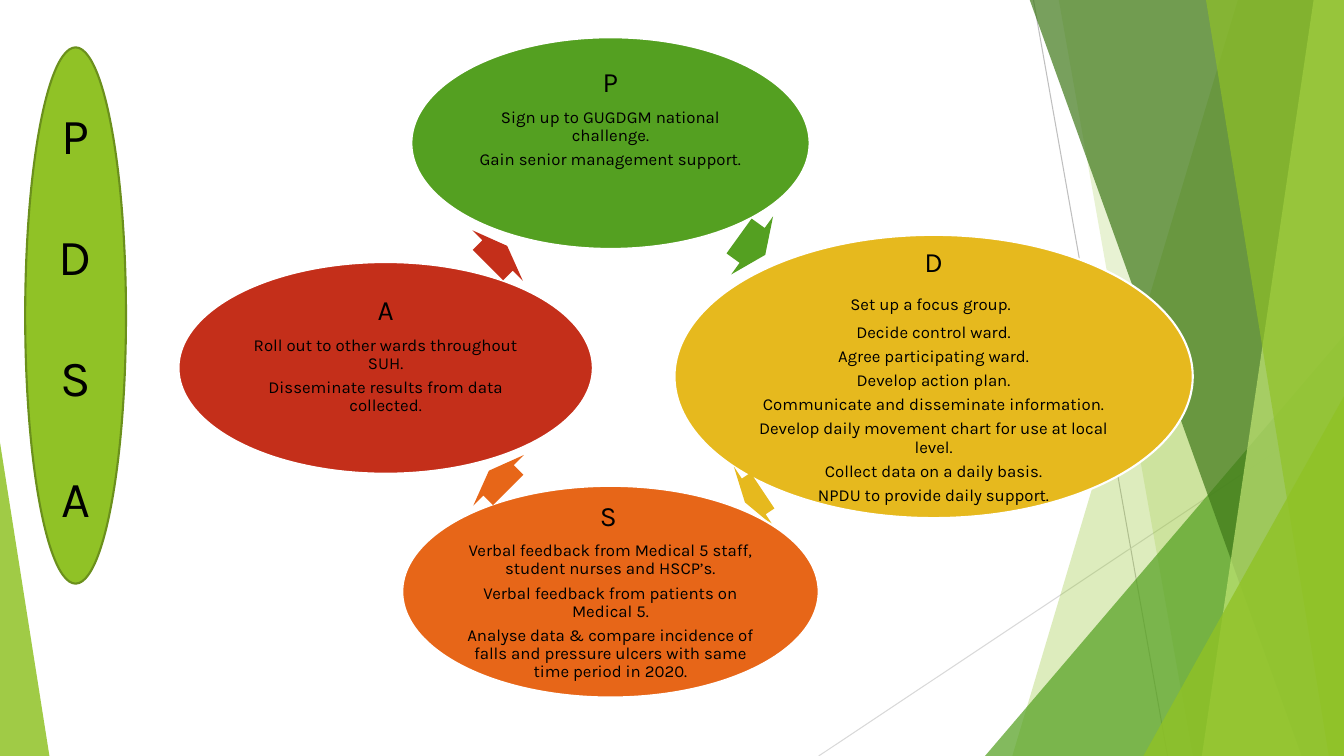
from dataclasses import dataclass

from lxml.etree import SubElement
from pptx import Presentation
from pptx.dml.color import RGBColor
from pptx.enum.shapes import MSO_CONNECTOR, MSO_SHAPE
from pptx.enum.text import MSO_ANCHOR, PP_ALIGN
from pptx.oxml.ns import qn
from pptx.shapes.autoshape import Shape
from pptx.slide import Slide
from pptx.util import Inches, Pt

FONT = "Karla"
BLACK = RGBColor(0x00, 0x00, 0x00)
WHITE = RGBColor(0xFF, 0xFF, 0xFF)
GREY = RGBColor(0xBF, 0xBF, 0xBF)
LIGHT_GREY = RGBColor(0xD9, 0xD9, 0xD9)
LIME = RGBColor(0x90, 0xC2, 0x26)
PALE_LIME = RGBColor(0xC0, 0xE4, 0x74)
OLIVE = RGBColor(0x6B, 0x90, 0x1C)
GREEN = RGBColor(0x54, 0xA0, 0x21)
DARK_GREEN = RGBColor(0x3F, 0x78, 0x19)
YELLOW = RGBColor(0xE6, 0xB9, 0x1E)
ORANGE = RGBColor(0xE7, 0x66, 0x18)
RED = RGBColor(0xC4, 0x2F, 0x1A)

WIDTH, HEIGHT = 13.33, 7.5
FACET_TOP = -0.01
HEADING_SIZE, BODY_SIZE = 20, 12
GAP_RATIO = 0.35
BLANK_LINE = 0.24

Box = tuple[float, float, float, float]


@dataclass(frozen=True)
class Ray:
    start: tuple[float, float]
    end: tuple[float, float]
    color: RGBColor


@dataclass(frozen=True)
class Facet:
    top_left: float
    bottom_left: float
    color: RGBColor
    opacity: int


@dataclass(frozen=True)
class Wedge:
    box: Box
    apex: float
    color: RGBColor
    opacity: int


@dataclass(frozen=True)
class Line:
    text: str
    size: float = BODY_SIZE
    space_size: float = 0


@dataclass(frozen=True)
class Stage:
    box: Box
    color: RGBColor
    lines: list[Line]
    arrow_box: Box
    arrow_angle: float
    blank_lines: int = 0


RAYS = [
    Ray((10.25, 0), (11.58, HEIGHT), GREY),
    Ray((WIDTH, 4.03), (8.12, HEIGHT), LIGHT_GREY),
]
BACKDROP = [
    Facet(12.28, 10.04, LIME, 30),
    Facet(10.5, 11.83, LIME, 20),
    Wedge((9.77, 3.33, 3.56, 4.17), 1, GREEN, 72),
    Facet(10.21, 12.91, DARK_GREEN, 70),
    Facet(13.03, 11.92, PALE_LIME, 70),
    Facet(11.96, 13.18, LIME, 65),
    Wedge((11.34, 3.93, 1.99, 3.57), 1, LIME, 80),
    Wedge((0, 4.39, 0.49, 3.11), 0, LIME, 85),
]
STAGES = [
    Stage((4.08, 0.37, 3.95, 2.1), GREEN, [
        Line("P", HEADING_SIZE),
        Line("Sign up to GUGDGM national challenge."),
        Line("Gain senior management support."),
    ], (7.3, 2.08, 0.32, 0.71), 35.8, blank_lines=2),
    Stage((6.69, 2.33, 5.14, 2.81), YELLOW, [
        Line("D", HEADING_SIZE),
        Line("Set up a focus group.", space_size=18),
        Line("Decide control ward."),
        Line("Agree participating ward."),
        Line("Develop action plan."),
        Line("Communicate and disseminate information."),
        Line("Develop daily movement chart for use at local level."),
        Line("Collect data on a daily basis."),
        Line("NPDU to provide daily support."),
    ], (7.37, 4.57, 0.21, 0.71), 146.3),
    Stage((3.99, 4.82, 4.13, 2.1), ORANGE, [
        Line("S", HEADING_SIZE, space_size=BODY_SIZE),
        Line("Verbal feedback from Medical 5 staff, student nurses and HSCP’s."),
        Line("Verbal feedback from patients on Medical 5."),
        Line("Analyse data & compare incidence of falls and pressure ulcers "
             "with same time period in 2020."),
    ], (4.81, 4.41, 0.27, 0.71), 225),
    Stage((1.77, 2.6, 4.11, 2.1), RED, [
        Line("A", HEADING_SIZE),
        Line("Roll out to other wards throughout SUH."),
        Line("Disseminate results from data collected."),
    ], (4.8, 2.18, 0.27, 0.71), 315, blank_lines=1),
]


def paint(shape: Shape, color: RGBColor, opacity: int = 100,
          outline: RGBColor | None = None) -> None:
    shape.shadow.inherit = False
    shape.fill.solid()
    shape.fill.fore_color.rgb = color
    if opacity < 100:
        color_element = shape._element.spPr.find(qn("a:solidFill"))[0]
        SubElement(color_element, qn("a:alpha"), val=str(opacity * 1000))
    if outline is None:
        shape.line.fill.background()
    else:
        shape.line.color.rgb = outline
        shape.line.width = Pt(1.5)


def add_preset(slide: Slide, kind: MSO_SHAPE, box: Box) -> Shape:
    return slide.shapes.add_shape(kind, *map(Inches, box))


def add_ray(slide: Slide, ray: Ray) -> None:
    connector = slide.shapes.add_connector(
        MSO_CONNECTOR.STRAIGHT, *map(Inches, ray.start + ray.end))
    connector.line.color.rgb = ray.color
    connector.line.width = Pt(0.75)
    SubElement(connector._element.spPr, qn("a:effectLst"))


def add_facet(slide: Slide, facet: Facet) -> None:
    builder = slide.shapes.build_freeform(Inches(facet.top_left), Inches(FACET_TOP))
    corners = [(WIDTH, FACET_TOP), (WIDTH, HEIGHT), (facet.bottom_left, HEIGHT)]
    builder.add_line_segments([(Inches(x), Inches(y)) for x, y in corners], close=True)
    paint(builder.convert_to_shape(), facet.color, facet.opacity)


def add_wedge(slide: Slide, wedge: Wedge) -> None:
    shape = add_preset(slide, MSO_SHAPE.ISOSCELES_TRIANGLE, wedge.box)
    shape.adjustments[0] = wedge.apex
    paint(shape, wedge.color, wedge.opacity)


def write_text(shape: Shape, lines: list[Line], *, line_spacing: float = 1,
               gap_ratio: float = 0, inset: float = 0.1, extra_bottom: float = 0) -> None:
    frame = shape.text_frame
    frame.word_wrap = True
    frame.vertical_anchor = MSO_ANCHOR.MIDDLE
    frame.margin_left = frame.margin_right = frame.margin_top = Inches(inset)
    frame.margin_bottom = Inches(inset + extra_bottom)
    for index, line in enumerate(lines):
        paragraph = frame.add_paragraph() if index else frame.paragraphs[0]
        paragraph.alignment = PP_ALIGN.CENTER
        paragraph.line_spacing = line_spacing
        if index < len(lines) - 1:
            paragraph.space_after = Pt(gap_ratio * max(line.size, line.space_size))
        pieces = [(line.text, line.size)]
        if line.space_size:
            pieces.append((" ", line.space_size))
        for text, size in pieces:
            run = paragraph.add_run()
            run.text = text
            run.font.name = FONT
            run.font.size = Pt(size)
            run.font.color.rgb = BLACK


def add_stage(slide: Slide, stage: Stage) -> None:
    ellipse = add_preset(slide, MSO_SHAPE.OVAL, stage.box)
    paint(ellipse, stage.color, outline=WHITE)
    write_text(ellipse, stage.lines, line_spacing=0.9, gap_ratio=GAP_RATIO,
               inset=0.03, extra_bottom=stage.blank_lines * BLANK_LINE)
    arrow = add_preset(slide, MSO_SHAPE.RIGHT_ARROW, stage.arrow_box)
    arrow.adjustments[0] = 0.6
    arrow.adjustments[1] = 0.5
    arrow.rotation = stage.arrow_angle
    paint(arrow, stage.color)


def main() -> None:
    presentation = Presentation()
    presentation.slide_width = Inches(WIDTH)
    presentation.slide_height = Inches(HEIGHT)
    slide = presentation.slides.add_slide(presentation.slide_layouts[6])
    for ray in RAYS:
        add_ray(slide, ray)
    for part in BACKDROP:
        if isinstance(part, Facet):
            add_facet(slide, part)
        else:
            add_wedge(slide, part)
    for stage in STAGES:
        add_stage(slide, stage)
    banner = add_preset(slide, MSO_SHAPE.OVAL, (0.25, 0.47, 1, 5.32))
    paint(banner, LIME, outline=OLIVE)
    write_text(banner, [Line(letter, 36) for letter in "PDSA"], gap_ratio=1.2)
    presentation.save("out.pptx")


if __name__ == "__main__":
    main()
